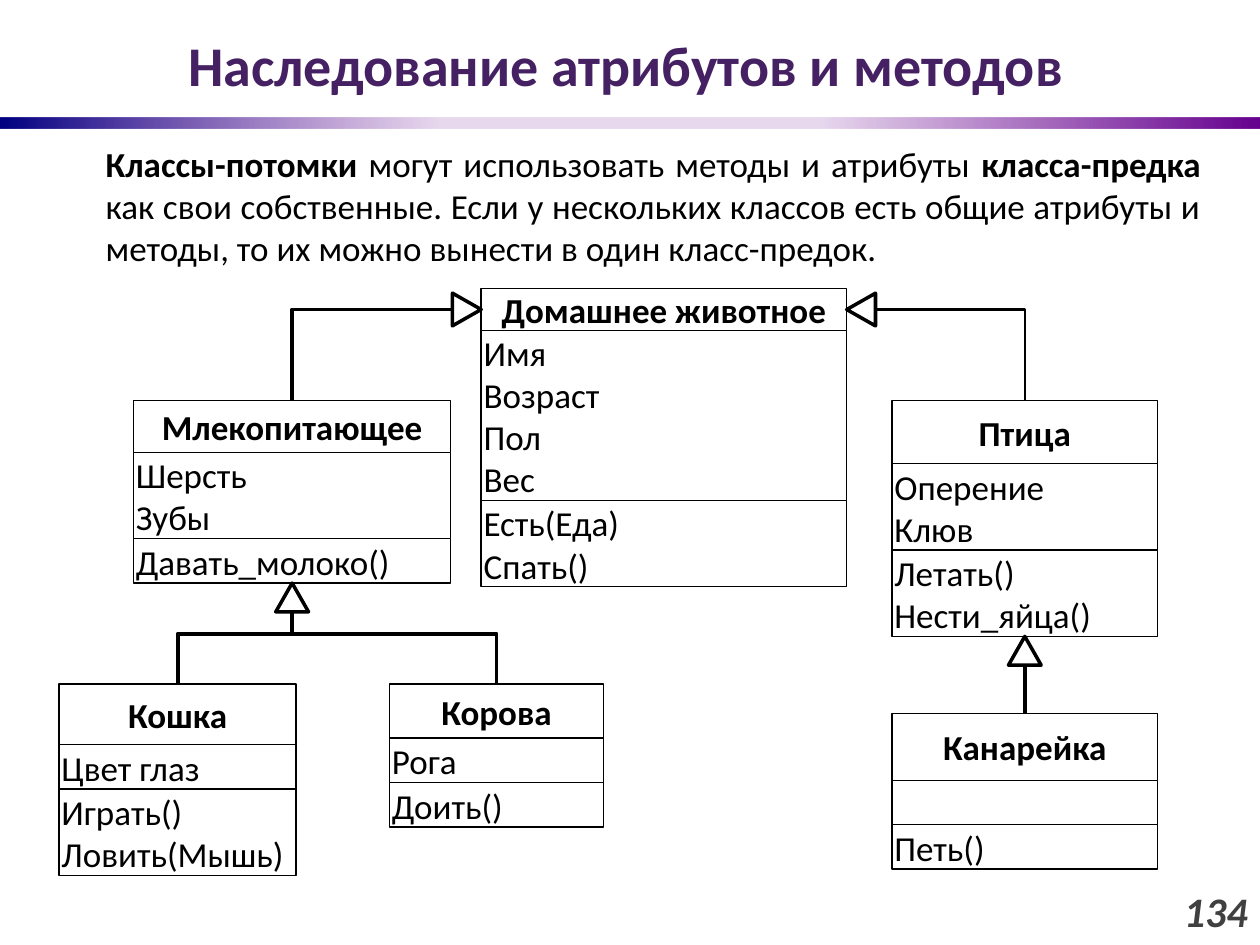
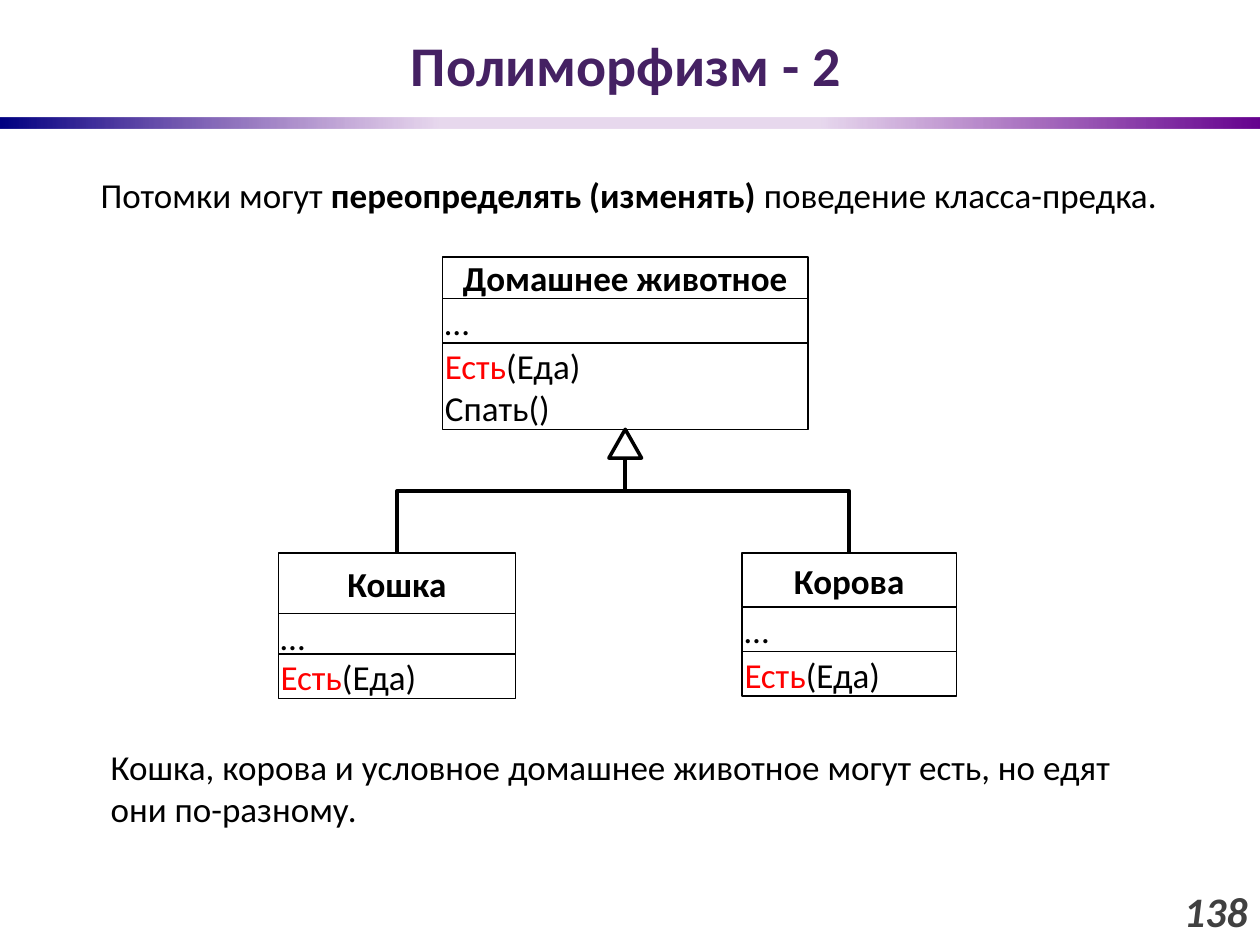
from dataclasses import dataclass
from math import cos, radians, sin

from lxml.etree import SubElement
from pptx import Presentation
from pptx.dml.color import RGBColor
from pptx.enum.shapes import MSO_CONNECTOR, MSO_SHAPE
from pptx.enum.text import MSO_ANCHOR, PP_ALIGN
from pptx.oxml import parse_xml
from pptx.oxml.ns import nsdecls, qn
from pptx.util import Cm, Pt

COLORS = {
    "title": "452163",
    "number": "404040",
    "ink": "000000",
    "paper": "FFFFFF",
    "override": "FF0000",
    "band_start": "000082",
    "band": "66008F",
}
FONT = "Calibri"
TITLE_BOX = (1.19, 0, 22.86, 2.59)
BAND_BOX = (0, 2.38, 25.4, 0.21)
NUMBER_BOX = (23.01, 17.65, 2.39, 1.4)
BAND_STOPS = [(0, "band_start", 100), (35, "band", 15), (65, "band", 15), (100, "band", 100)]
LINE_HEIGHT = 0.845
ROW_PADDING = 0.05
HEAD_WIDTH, HEAD_LENGTH = 0.66, 0.58


@dataclass
class ClassBox:
    name: str
    left: float
    top: float
    width: float
    name_height: float
    attributes: tuple = ()
    methods: tuple = ()
    overridden: str = ""
    overlap: float = 0

    @property
    def center(self):
        return self.left + self.width / 2

    @property
    def right(self):
        return self.left + self.width

    @property
    def bottom(self):
        rows = row_height(self.attributes) + row_height(self.methods)
        return self.top + self.name_height + rows - self.overlap


def row_height(lines):
    return ROW_PADDING + LINE_HEIGHT * max(1, len(lines))


def color(name):
    return RGBColor.from_string(COLORS[name])


def lengths(box):
    return [Cm(value) for value in box]


def style(para, size=20, ink="ink", bold=False, italic=False, align=PP_ALIGN.LEFT):
    para.alignment = align
    font = para.font
    font.name, font.size, font.bold, font.italic = FONT, Pt(size), bold, italic
    font.color.rgb = color(ink)


def add_band(page, layout):
    band = page.shapes.add_shape(MSO_SHAPE.RECTANGLE, *lengths(BAND_BOX))
    band.shadow.inherit = False
    band.line.fill.background()
    stops = "".join(
        f'<a:gs pos="{place * 1000}"><a:srgbClr val="{COLORS[name]}">'
        f'<a:alpha val="{alpha * 1000}"/></a:srgbClr></a:gs>'
        for place, name, alpha in BAND_STOPS
    )
    gradient = parse_xml(
        f'<a:gradFill {nsdecls("a")}><a:gsLst>{stops}</a:gsLst><a:lin ang="0"/></a:gradFill>'
    )
    band.element.spPr.find(qn("a:prstGeom")).addnext(gradient)
    layout.shapes.element.append(band.element)


def prepare_layout(layout):
    title = layout.placeholders[0]
    title.left, title.top, title.width, title.height = lengths(TITLE_BOX)


def add_page(deck, layout, heading, number):
    page = deck.slides.add_slide(layout)
    frame = page.shapes.title.text_frame
    frame.text = heading
    frame.vertical_anchor = MSO_ANCHOR.MIDDLE
    style(frame.paragraphs[0], 32, "title", bold=True, align=PP_ALIGN.CENTER)
    frame = page.shapes.add_textbox(*lengths(NUMBER_BOX)).text_frame
    frame.word_wrap = True
    frame.vertical_anchor = MSO_ANCHOR.MIDDLE
    frame.text = number
    style(frame.paragraphs[0], 24, "number", True, True, PP_ALIGN.RIGHT)
    return page


def add_text(page, box, spans, align=PP_ALIGN.LEFT):
    frame = page.shapes.add_textbox(*lengths(box)).text_frame
    frame.word_wrap = True
    para = frame.paragraphs[0]
    style(para, align=align)
    para.space_after = Pt(6)
    for text, bold in spans:
        span = para.add_run()
        span.text = text
        span.font.bold = bold


def add_outlined(page, kind, box, width):
    shape = page.shapes.add_shape(kind, *lengths(box))
    shape.shadow.inherit = False
    shape.fill.solid()
    shape.fill.fore_color.rgb = color("paper")
    shape.line.color.rgb = color("ink")
    shape.line.width = Pt(width)
    return shape


def add_row(page, box, lines, overridden="", heading=False):
    frame = add_outlined(page, MSO_SHAPE.RECTANGLE, box, 0.75).text_frame
    frame.word_wrap = True
    frame.margin_left = frame.margin_right = Cm(0.05)
    frame.margin_top = Cm(0 if heading else 0.03)
    frame.margin_bottom = 0
    frame.vertical_anchor = MSO_ANCHOR.MIDDLE if heading else MSO_ANCHOR.TOP
    for index, line in enumerate(lines):
        para = frame.add_paragraph() if index else frame.paragraphs[0]
        style(para, bold=heading, align=PP_ALIGN.CENTER if heading else PP_ALIGN.LEFT)
        if overridden and line.startswith(overridden):
            span = para.add_run()
            span.text = overridden
            span.font.color.rgb = color("override")
            line = line.removeprefix(overridden)
        para.add_run().text = line


def add_class(page, item):
    top = item.top
    add_row(page, (item.left, top, item.width, item.name_height), [item.name], heading=True)
    top += item.name_height
    height = row_height(item.attributes)
    add_row(page, (item.left, top, item.width, height), item.attributes)
    top += height - item.overlap
    height = row_height(item.methods)
    add_row(page, (item.left, top, item.width, height), item.methods, item.overridden)


def add_line(page, kind, start, end, width=2.25):
    line = page.shapes.add_connector(kind, *lengths(start + end))
    line.line.color.rgb = color("ink")
    line.line.width = Pt(width)
    SubElement(line.element.spPr, qn("a:effectLst"))
    return line


def add_arrowhead(page, tip, angle=0):
    middle_x = tip[0] - HEAD_LENGTH / 2 * sin(radians(angle))
    middle_y = tip[1] + HEAD_LENGTH / 2 * cos(radians(angle))
    box = (middle_x - HEAD_WIDTH / 2, middle_y - HEAD_LENGTH / 2, HEAD_WIDTH, HEAD_LENGTH)
    add_outlined(page, MSO_SHAPE.ISOSCELES_TRIANGLE, box, 2).rotation = angle


def link_from_side(page, parent, child, width=2.25):
    to_left = child.center < parent.left
    tip = (parent.left if to_left else parent.right, parent.top + parent.name_height / 2)
    line = add_line(page, MSO_CONNECTOR.ELBOW, tip, (child.center, child.top), width)
    line.element.spPr.find(qn("a:prstGeom")).set("prst", "bentConnector2")
    add_arrowhead(page, tip, 90 if to_left else 270)


def link_from_bottom(page, parent, children):
    tip = (parent.center, parent.bottom)
    for child in children:
        end = (child.center, child.top)
        if abs(end[0] - tip[0]) < 0.01:
            add_line(page, MSO_CONNECTOR.STRAIGHT, tip, end)
            continue
        middle_x, middle_y = (tip[0] + end[0]) / 2, (tip[1] + end[1]) / 2
        half_x, half_y = (end[0] - tip[0]) / 2, (end[1] - tip[1]) / 2
        line = add_line(
            page,
            MSO_CONNECTOR.ELBOW,
            (middle_x - half_y, middle_y + half_x),
            (middle_x + half_y, middle_y - half_x),
        )
        line.element.spPr.find(qn("a:xfrm")).set("rot", "5400000")
    add_arrowhead(page, tip)


def build_inheritance(page):
    animal = ClassBox("Домашнее животное", 9.7, 5.82, 7.37, 0.84,
                      ("Имя", "Возраст", "Пол", "Вес"), ("Есть(Еда)", "Спать()"))
    mammal = ClassBox("Млекопитающее", 2.69, 8.08, 6.4, 1.04,
                      ("Шерсть", "Зубы"), ("Давать_молоко()",))
    bird = ClassBox("Птица", 17.98, 8.08, 5.36, 1.27,
                    ("Оперение", "Клюв"), ("Летать()", "Нести_яйца()"))
    cat = ClassBox("Кошка", 1.19, 13.79, 4.78, 1.22,
                   ("Цвет глаз",), ("Играть()", "Ловить(Мышь)"))
    cow = ClassBox("Корова", 7.85, 13.79, 4.32, 1.09, ("Рога",), ("Доить()",))
    canary = ClassBox("Канарейка", 17.98, 14.38, 5.36, 1.35, (), ("Петь()",))
    for item in (animal, mammal, bird, cat, cow, canary):
        add_class(page, item)
    link_from_side(page, animal, bird, 1.5)
    link_from_side(page, animal, mammal)
    link_from_bottom(page, bird, [canary])
    link_from_bottom(page, mammal, [cat, cow])
    add_text(page, (1.88, 2.74, 22.58, 2.82), [
        ("Классы-потомки", True),
        (" могут использовать методы и атрибуты ", False),
        ("класса-предка", True),
        (" как свои собственные. Если у нескольких классов есть общие атрибуты и методы, "
         "то их можно вынести в один класс-предок.", False),
    ], PP_ALIGN.JUSTIFY)


def build_polymorphism(page):
    add_text(page, (1.78, 3.38, 22.02, 1.12), [
        ("Потомки могут ", False),
        ("переопределять (изменять)", True),
        (" поведение класса-предка.", False),
    ], PP_ALIGN.JUSTIFY)
    animal = ClassBox("Домашнее животное", 8.92, 5.18, 7.37, 0.84,
                      ("…",), ("Есть(Еда)", "Спать()"), "Есть")
    cat = ClassBox("Кошка", 5.61, 11.15, 4.78, 1.22, ("…",), ("Есть(Еда)",), "Есть", 0.08)
    cow = ClassBox("Корова", 14.96, 11.15, 4.32, 1.09, ("…",), ("Есть(Еда)",), "Есть")
    for item in (animal, cat, cow):
        add_class(page, item)
    link_from_bottom(page, animal, [cat, cow])
    add_text(page, (1.98, 14.91, 21.23, 1.96), [
        ("Кошка, корова и условное домашнее животное могут есть, но едят они по-разному.", False),
    ])


def main():
    deck = Presentation()
    deck.slide_width, deck.slide_height = Cm(25.4), Cm(19.05)
    layout = deck.slide_layouts[5]
    prepare_layout(layout)
    inheritance = add_page(deck, layout, "Наследование атрибутов и методов", "134")
    add_band(inheritance, layout)
    build_inheritance(inheritance)
    build_polymorphism(add_page(deck, layout, "Полиморфизм - 2", "138"))
    deck.save("out.pptx")


if __name__ == "__main__":
    main()
